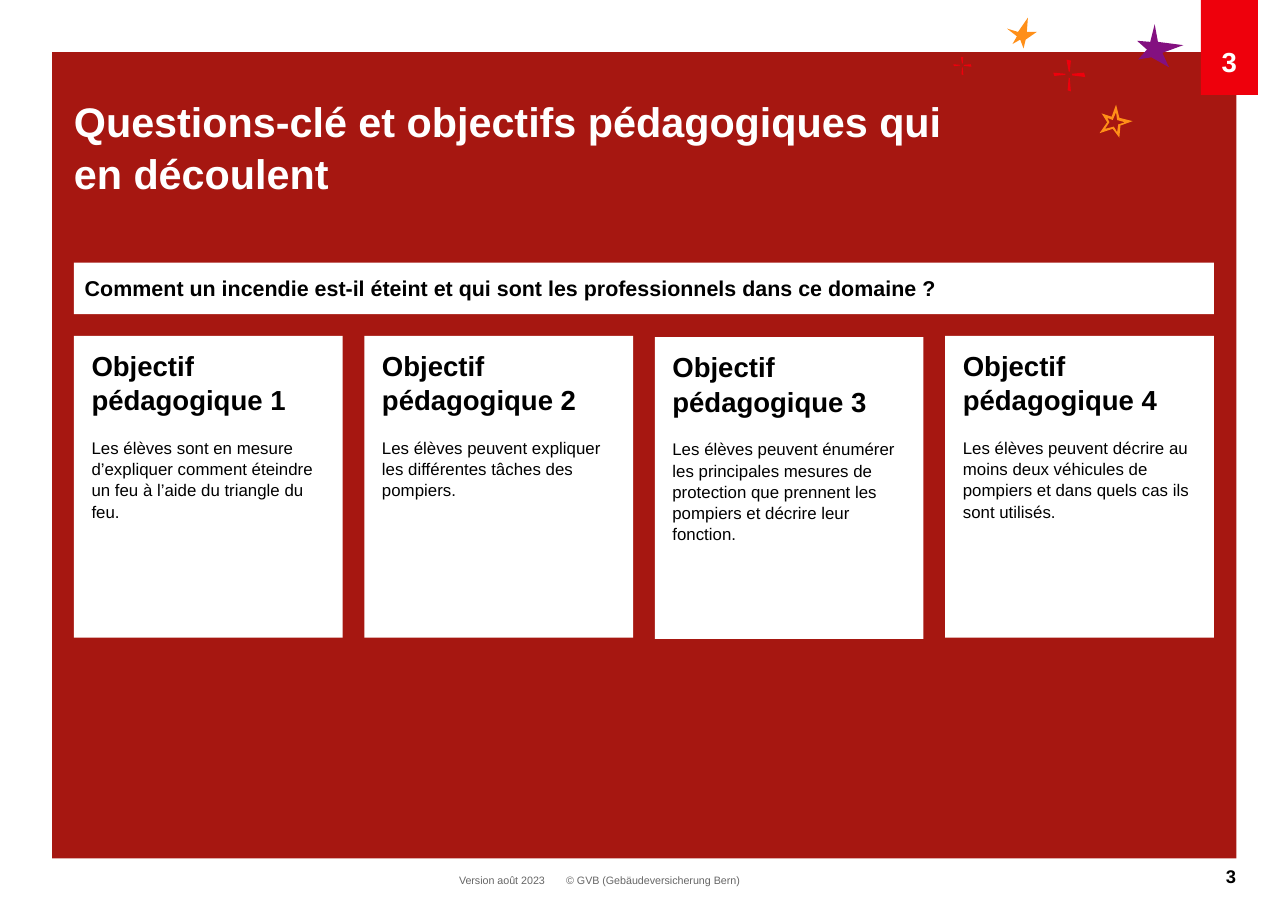
"""Build the slide on key questions and the learning objectives drawn from them."""
from pptx import Presentation
from pptx.dml.color import RGBColor
from pptx.enum.shapes import MSO_SHAPE as Shape
from pptx.enum.text import MSO_ANCHOR as Anchor, MSO_AUTO_SIZE as AutoSize, PP_ALIGN as Align
from pptx.util import Pt

WHITE = RGBColor(0xFF, 0xFF, 0xFF)
BLACK = RGBColor(0, 0, 0)
GREY = RGBColor(0x66, 0x66, 0x66)
DARK_RED = RGBColor(0xA6, 0x17, 0x11)
RED = RGBColor(0xEE, 0x00, 0x0C)
ORANGE = RGBColor(0xFF, 0x8F, 0x18)
PURPLE = RGBColor(0x83, 0x10, 0x80)


def paint(shape, color):
    shape.shadow.inherit = False
    shape.fill.solid()
    shape.fill.fore_color.rgb = color
    shape.line.fill.background()
    return shape


def write(shape, *texts, sizes, bolds=(False,), color=BLACK, align=Align.LEFT,
          anchor=Anchor.TOP, insets=(0, 0, 0, 0), spacing=1.0, gap=0):
    frame = shape.text_frame
    frame.word_wrap = True
    frame.auto_size = AutoSize.NONE
    frame.vertical_anchor = anchor
    frame.margin_left, frame.margin_top, frame.margin_right, frame.margin_bottom = map(Pt, insets)
    for index, (text, size, bold) in enumerate(zip(texts, sizes, bolds)):
        paragraph = frame.add_paragraph() if index else frame.paragraphs[0]
        paragraph.alignment = align
        paragraph.line_spacing = spacing
        paragraph.space_before = Pt(gap if index else 0)
        run = paragraph.add_run()
        run.text = text
        run.font.name = "Arial"
        run.font.size = Pt(size)
        run.font.bold = bold
        run.font.color.rgb = color


presentation = Presentation()
presentation.slide_width = Pt(841.7)
presentation.slide_height = Pt(595.4)
slide = presentation.slides.add_slide(presentation.slide_layouts[5])
shapes = slide.shapes

panel = paint(shapes.add_shape(Shape.RECTANGLE, Pt(34), Pt(34), Pt(774), Pt(527)), DARK_RED)

title = shapes.title
panel.element.addnext(title.element)
title.left, title.top, title.width, title.height = Pt(48.3), Pt(61.2), Pt(581), Pt(66)
write(title, "Questions-clé et objectifs pédagogiques qui en découlent",
      sizes=[27], bolds=[True], color=WHITE, spacing=1.05)

# Star corners are in hundredths of an inch, which is 0.72 points.
STAR_UNIT = 0.72
purple_star = [(1044, 38), (1032, 37), (1041, 45), (1033, 54), (1045, 52), (1061, 61),
               (1055, 48), (1074, 41), (1051, 38), (1048, 22)]
orange_star = [(919, 40), (926, 36), (929, 44), (931, 36), (941, 29), (932, 29),
               (933, 16), (924, 29), (914, 26), (923, 33)]
hollow_star = [(1016, 125), (1010, 117), (998, 121), (1005, 111), (1000, 103), (1009, 106),
               (1013, 95), (1016, 107), (1028, 110), (1017, 114)]
hollow_star_hole = [(1011, 115), (1014, 120), (1015, 113), (1021, 111), (1014, 109),
                    (1013, 102), (1010, 109), (1005, 107), (1007, 111), (1003, 117)]
sparkle_rays = [
    [(-0.5, -3), (-2.5, -14), (1.5, -13), (0.5, -3)],
    [(0.5, 3), (1.5, 15), (-1.5, 14), (-0.5, 2.5)],
    [(2.5, -1), (13.5, -2), (14.5, 2), (2.5, 0.5)],
    [(-3.5, 0), (-13.5, 1), (-14.5, -2), (-3.5, -1)],
]

outlines = [([purple_star], PURPLE), ([orange_star], ORANGE),
            ([hollow_star, hollow_star_hole], ORANGE)]
for center_x, center_y, scale in [(970.5, 68, 1), (873.5, 59.5, 0.57)]:
    for ray in sparkle_rays:
        outlines.append(([[(center_x + x * scale, center_y + y * scale) for x, y in ray]], RED))

for contours, color in outlines:
    builder = None
    for contour in contours:
        start, *corners = [(Pt(x * STAR_UNIT), Pt(y * STAR_UNIT)) for x, y in contour]
        if builder is None:
            builder = shapes.build_freeform(*start)
        else:
            builder.move_to(*start)
        builder.add_line_segments(corners, close=True)
    paint(builder.convert_to_shape(), color)

chapter_tab = paint(shapes.add_shape(Shape.RECTANGLE, Pt(784.7), Pt(0), Pt(37.4), Pt(62)), RED)
write(chapter_tab, "3", sizes=[18], bolds=[True], color=WHITE, align=Align.CENTER,
      anchor=Anchor.BOTTOM, insets=(0, 28.8, 0, 10.8))

question = paint(shapes.add_shape(Shape.RECTANGLE, Pt(48.3), Pt(171.6), Pt(745), Pt(33.7)), WHITE)
write(question, "Comment un incendie est-il éteint et qui sont les professionnels dans ce domaine ?",
      sizes=[14], bolds=[True], anchor=Anchor.MIDDLE, insets=(7.2, 3.6, 7.2, 3.6))

objectives = [
    (219.5, "Les élèves sont en mesure d’expliquer comment éteindre un feu à l’aide du triangle du feu."),
    (219.5, "Les élèves peuvent expliquer les différentes tâches des pompiers."),
    (220.4, "Les élèves peuvent énumérer les principales mesures de protection que prennent "
            "les pompiers et décrire leur fonction."),
    (219.5, "Les élèves peuvent décrire au moins deux véhicules de pompiers et dans quels cas "
            "ils sont utilisés."),
]
for index, (top, objective) in enumerate(objectives):
    card = paint(shapes.add_shape(Shape.RECTANGLE, Pt(48.3 + index * 189.8), Pt(top),
                                  Pt(175.6), Pt(197.2)), WHITE)
    write(card, f"Objectif pédagogique {index + 1}", objective, sizes=[18, 11],
          bolds=[True, False], insets=(11.5, 7.2, 11.5, 7.2), spacing=1.05, gap=13.3)

version = shapes.add_textbox(Pt(297.4), Pt(571), Pt(61.2), Pt(9.4))
write(version, "Version août 2023", sizes=[7], color=GREY, align=Align.CENTER)
copyright_line = shapes.add_textbox(Pt(370), Pt(571), Pt(118), Pt(9))
write(copyright_line, "© GVB (Gebäudeversicherung Bern)", sizes=[7], color=GREY)
page_number = shapes.add_textbox(Pt(756.7), Pt(565.2), Pt(51.1), Pt(12.2))
write(page_number, "3", sizes=[12], bolds=[True], align=Align.RIGHT)

presentation.save("out.pptx")
